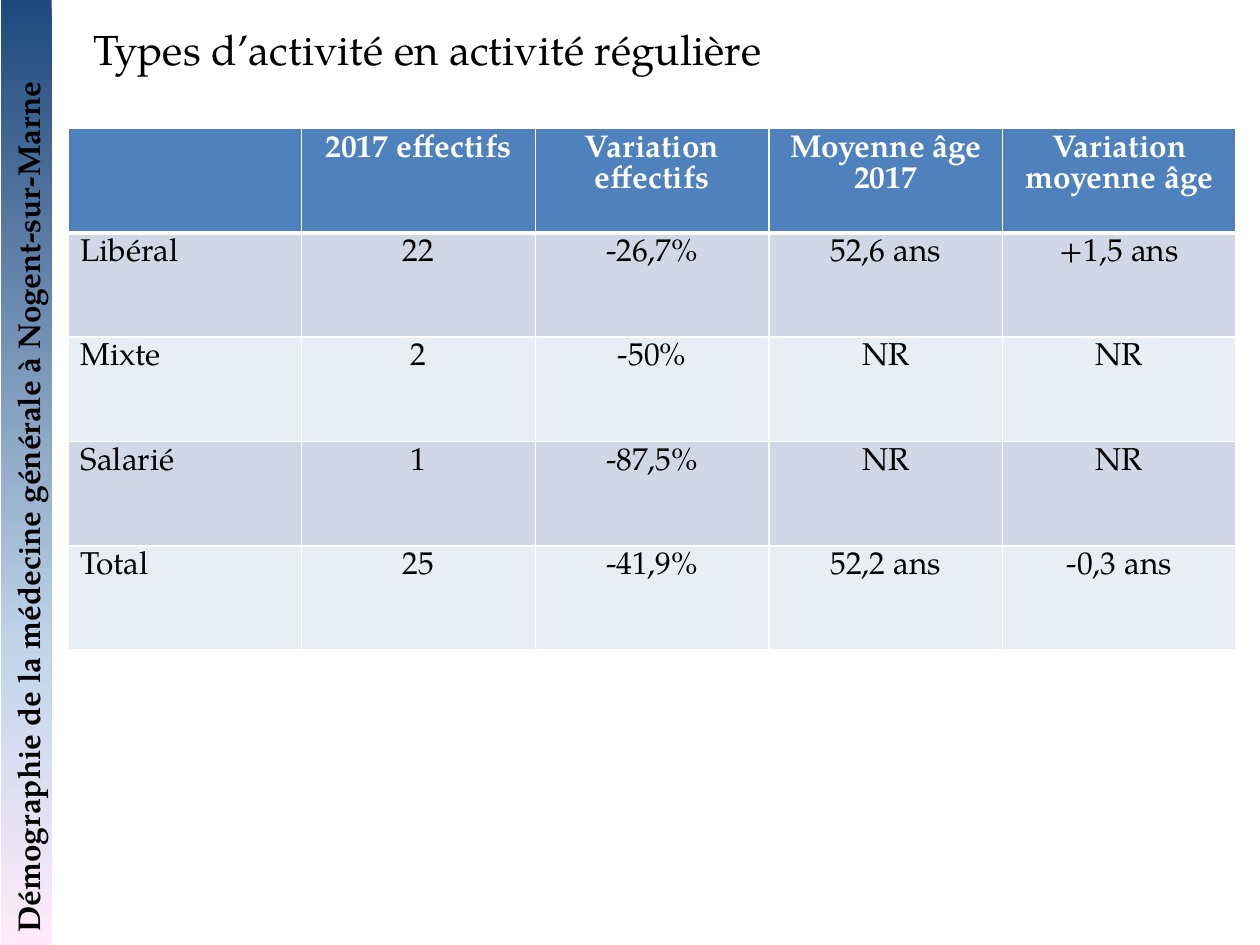
"""Build the slide on types of regular medical activity."""
from lxml import etree
from pptx import Presentation
from pptx.dml.color import RGBColor as Rgb
from pptx.enum.shapes import MSO_SHAPE as Shape
from pptx.enum.text import MSO_ANCHOR as Anchor, PP_ALIGN as Align
from pptx.oxml import parse_xml
from pptx.oxml.ns import nsdecls, qn
from pptx.util import Inches, Pt

TITLE = "Types d’activité en activité régulière"
SIDE = "Démographie de la médecine générale à Nogent-sur-Marne"
ROWS = [
    ("", "2017 effectifs", "Variation\neffectifs", "Moyenne âge 2017", "Variation moyenne âge"),
    ("Libéral", "22", "-26,7%", "52,6 ans", "+1,5 ans"),
    ("Mixte", "2", "-50%", "NR", "NR"),
    ("Salarié", "1", "-87,5%", "NR", "NR"),
    ("Total", "25", "-41,9%", "52,2 ans", "-0,3 ans"),
]
HEAD, BANDS = "4F81BD", ("E9EDF4", "D0D8E8")
STOPS = [(0, "1F497D"), (70, "C4D6EB"), (100, "FFEBFA")]
BLACK, WHITE = "000000", "FFFFFF"
WIDE, HIGH = Inches(10), Inches(7.5)
BAR = Inches(0.4)


def color(code):
    """Turn a hex string into a colour."""
    return Rgb.from_string(code)


def apply(item, form):
    """Set each attribute in a dict of format values."""
    for name, value in form.items():
        setattr(item, name, value)


def style(frame, size, pitch, ink=BLACK, bold=False, align=Align.LEFT):
    """Format every paragraph of a text frame."""
    apply(frame, {"word_wrap": True, "vertical_anchor": Anchor.TOP})
    for para in frame.paragraphs:
        apply(para, {"alignment": align, "line_spacing": Pt(pitch)})
        apply(para.font, {"name": "TeX Gyre Pagella", "size": Pt(size), "bold": bold})
        para.font.color.rgb = color(ink)


def edge(cell, side, width):
    """Draw one white border of a cell."""
    props = cell._tc.get_or_add_tcPr()
    line = etree.SubElement(props, qn("a:ln" + side), w=str(Pt(width)))
    fill = etree.SubElement(line, qn("a:solidFill"))
    etree.SubElement(fill, qn("a:srgbClr"), val=WHITE)


def add_title(slide):
    """Place and format the title."""
    box = slide.shapes.title
    apply(box, {"left": Inches(0.64), "top": Inches(0.11),
                "width": Inches(5.6), "height": Inches(0.91)})
    box.text_frame.text = TITLE
    style(box.text_frame, 24, 30.5)


def add_grid(slide):
    """Add the table of headcounts and ages."""
    count, cols = len(ROWS), len(ROWS[0])
    table = slide.shapes.add_table(count, cols, Inches(0.54), Inches(1.02),
                                   Inches(9.27), Inches(4.14)).table
    for r, row in enumerate(ROWS):
        for c, text in enumerate(row):
            cell = table.cell(r, c)
            cell.text = text
            style(cell.text_frame, 18, 17.8, BLACK if r else WHITE, r == 0,
                  Align.CENTER if c else Align.LEFT)
            for side, width in zip("LRTB", (1, 1, 3 if r == 1 else 1, 1 if r else 3)):
                edge(cell, side, width)
            cell.fill.solid()
            cell.fill.fore_color.rgb = color(BANDS[r % 2] if r else HEAD)


def add_side(slide):
    """Add the upright gradient bar with its caption."""
    bar = slide.shapes.add_shape(Shape.RECTANGLE, (BAR - HIGH) // 2 + Inches(0.01),
                                 (HIGH - BAR) // 2, HIGH, BAR)
    bar.rotation = 270
    bar.shadow.inherit = False
    bar.line.fill.background()
    stops = "".join(f'<a:gs pos="{pos * 1000}"><a:srgbClr val="{code}"/></a:gs>'
                    for pos, code in STOPS)
    grad = parse_xml(f'<a:gradFill {nsdecls("a")} rotWithShape="0"><a:gsLst>{stops}</a:gsLst>'
                     '<a:lin ang="5400000" scaled="0"/></a:gradFill>')
    bar._element.spPr.find(qn("a:prstGeom")).addnext(grad)
    bar.text_frame.text = SIDE
    style(bar.text_frame, 18, 22.5, bold=True)


def main():
    """Build and save the slide."""
    deck = Presentation()
    apply(deck, {"slide_width": WIDE, "slide_height": HIGH})
    slide = deck.slides.add_slide(deck.slide_layouts[5])
    for build in (add_title, add_grid, add_side):
        build(slide)
    deck.save("out.pptx")


if __name__ == "__main__":
    main()
